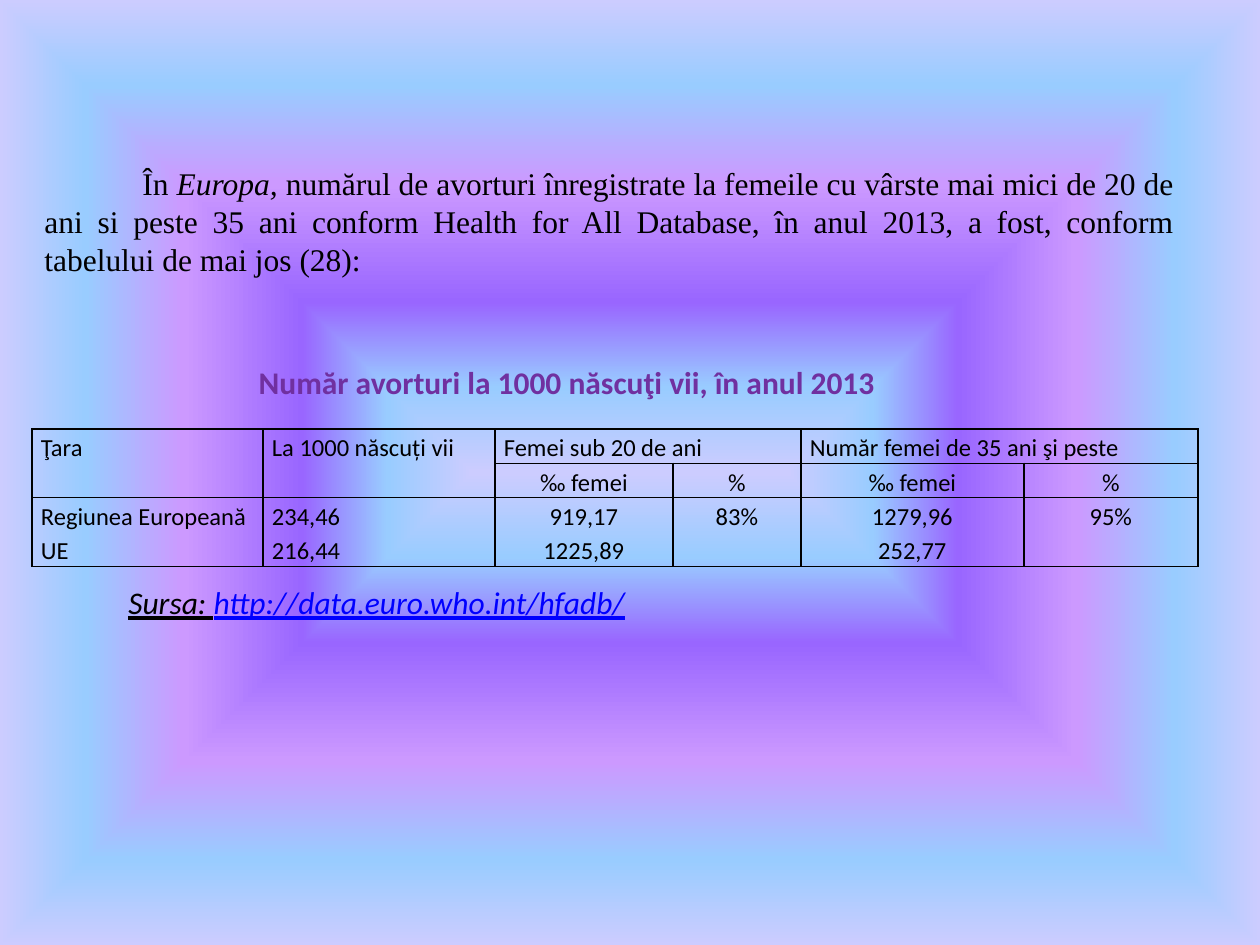
from lxml import etree
from pptx import Presentation
from pptx.dml.color import RGBColor
from pptx.enum.text import MSO_AUTO_SIZE as Fit, PP_ALIGN as Align
from pptx.oxml import parse_xml
from pptx.oxml.ns import nsdecls, qn
from pptx.util import Pt

PX = 914400 / 126
BLACK = RGBColor(0x00, 0x00, 0x00)
PURPLE = RGBColor(0x70, 0x30, 0xA0)
BLUE = RGBColor(0x00, 0x00, 0xFF)
LILAC = RGBColor(0xCC, 0xCC, 0xFF)
SKY = RGBColor(0x99, 0xCC, 0xFF)
VIOLET = RGBColor(0x99, 0x66, 0xFF)
ORCHID = RGBColor(0xCC, 0x99, 0xFF)

GLOW = [(0, LILAC), (18, SKY), (36, VIOLET), (61, ORCHID), (82, SKY), (100, LILAC)]
COLUMNS = [231, 232, 178, 128, 223, 174]
ROWS = [34, 34, 69]
CELLS = [
    ["Ţara", "La 1000 născuți vii", "Femei sub 20 de ani", "",
     "Număr femei de 35 ani şi peste", ""],
    ["", "", "‰ femei", "%", "‰ femei", "%"],
    ["Regiunea Europeană\nUE", "234,46\n216,44", "919,17\n1225,89", "83%",
     "1279,96\n252,77", "95%"],
]
MERGES = [(0, 0, 1, 0), (0, 1, 1, 1), (0, 2, 0, 3), (0, 4, 0, 5)]


def px(n):
    return round(n * PX)


class SlideBuilder:
    body_font = "Calibri"
    text_size = Pt(18)
    cell_size = Pt(14)
    cell_margin = px(9)

    def __init__(self, slide):
        self.slide = slide

    def background(self, stops):
        gs = "".join(
            f'<a:gs pos="{pos * 1000}"><a:srgbClr val="{color}"/></a:gs>'
            for pos, color in stops)
        bg = parse_xml(
            f'<p:bg {nsdecls("p", "a")}><p:bgPr><a:gradFill rotWithShape="1">'
            f'<a:gsLst>{gs}</a:gsLst><a:path path="shape">'
            '<a:fillToRect l="50000" t="50000" r="50000" b="50000"/></a:path>'
            '</a:gradFill><a:effectLst/></p:bgPr></p:bg>')
        self.slide.element.cSld.insert(0, bg)

    def text(self, x, y, w, h, runs, align=Align.LEFT, font=None, color=BLACK,
             bold=False, wrap=True, indent=0):
        tf = self.slide.shapes.add_textbox(px(x), px(y), px(w), px(h)).text_frame
        tf.word_wrap = wrap
        tf.auto_size = Fit.SHAPE_TO_FIT_TEXT
        p = tf.paragraphs[0]
        p.alignment = align
        p.font.name = font or self.body_font
        p.font.size = self.text_size
        p.font.bold = bold
        p.font.color.rgb = color
        if indent:
            p._p.get_or_add_pPr().set("indent", str(px(indent)))
        for words, style in runs:
            r = p.add_run()
            r.text = words
            r.font.italic = style.get("italic")
            r.font.underline = style.get("underline")
            r.font.color.rgb = style.get("color", color)

    def borders(self, cell):
        tcPr = cell._tc.get_or_add_tcPr()
        for i, side in enumerate(("lnL", "lnR", "lnT", "lnB")):
            ln = etree.Element(qn(f"a:{side}"), w=str(Pt(1)))
            fill = etree.SubElement(ln, qn("a:solidFill"))
            etree.SubElement(fill, qn("a:srgbClr"), val=str(BLACK))
            tcPr.insert(i, ln)

    def cell(self, cell, words, align):
        cell.fill.background()
        self.borders(cell)
        cell.margin_left = cell.margin_right = self.cell_margin
        cell.margin_top = cell.margin_bottom = 0
        cell.text = words
        for p in cell.text_frame.paragraphs:
            p.alignment = align
            p.line_spacing = 1.15
            p.font.name = self.body_font
            p.font.size = self.cell_size
            p.font.color.rgb = BLACK

    def table(self, x, y, columns, rows, cells, merges):
        table = self.slide.shapes.add_table(
            len(rows), len(columns), px(x), px(y),
            px(sum(columns)), px(sum(rows))).table
        table.first_row = table.horz_banding = False
        for column, width in zip(table.columns, columns):
            column.width = px(width)
        for row, height in zip(table.rows, rows):
            row.height = px(height)
        for i, line in enumerate(cells):
            for j, words in enumerate(line):
                centred = i > 0 and j > 1
                self.cell(table.cell(i, j), words,
                          Align.CENTER if centred else Align.JUSTIFY)
        for top, left, bottom, right in merges:
            table.cell(top, left).merge(table.cell(bottom, right))


def main():
    prs = Presentation()
    prs.slide_width, prs.slide_height = px(1260), px(945)
    s = SlideBuilder(prs.slides.add_slide(prs.slide_layouts[6]))
    s.background(GLOW)
    s.table(32, 429, COLUMNS, ROWS, CELLS, MERGES)
    s.text(32, 158, 1155, 127, [
        ("În", {}),
        (" Europa,", {"italic": True}),
        (" numărul de avorturi înregistrate la femeile cu vârste mai mici de 20 de ani "
         "si peste 35 ani conform Health for All Database, în anul 2013, a fost, "
         "conform tabelului de mai jos (28):", {}),
    ], align=Align.JUSTIFY, font="Times New Roman", indent=98)
    s.text(210, 357, 714, 50,
           [("Număr avorturi la 1000 născuţi vii, în anul 2013", {})],
           align=Align.CENTER, color=PURPLE, bold=True)
    source = {"italic": True, "underline": True}
    s.text(116, 577, 528, 50, [
        ("Sursa: ", source),
        ("http://data.euro.who.int/hfadb/", {**source, "color": BLUE}),
    ], wrap=False)
    prs.save("out.pptx")


if __name__ == "__main__":
    main()
